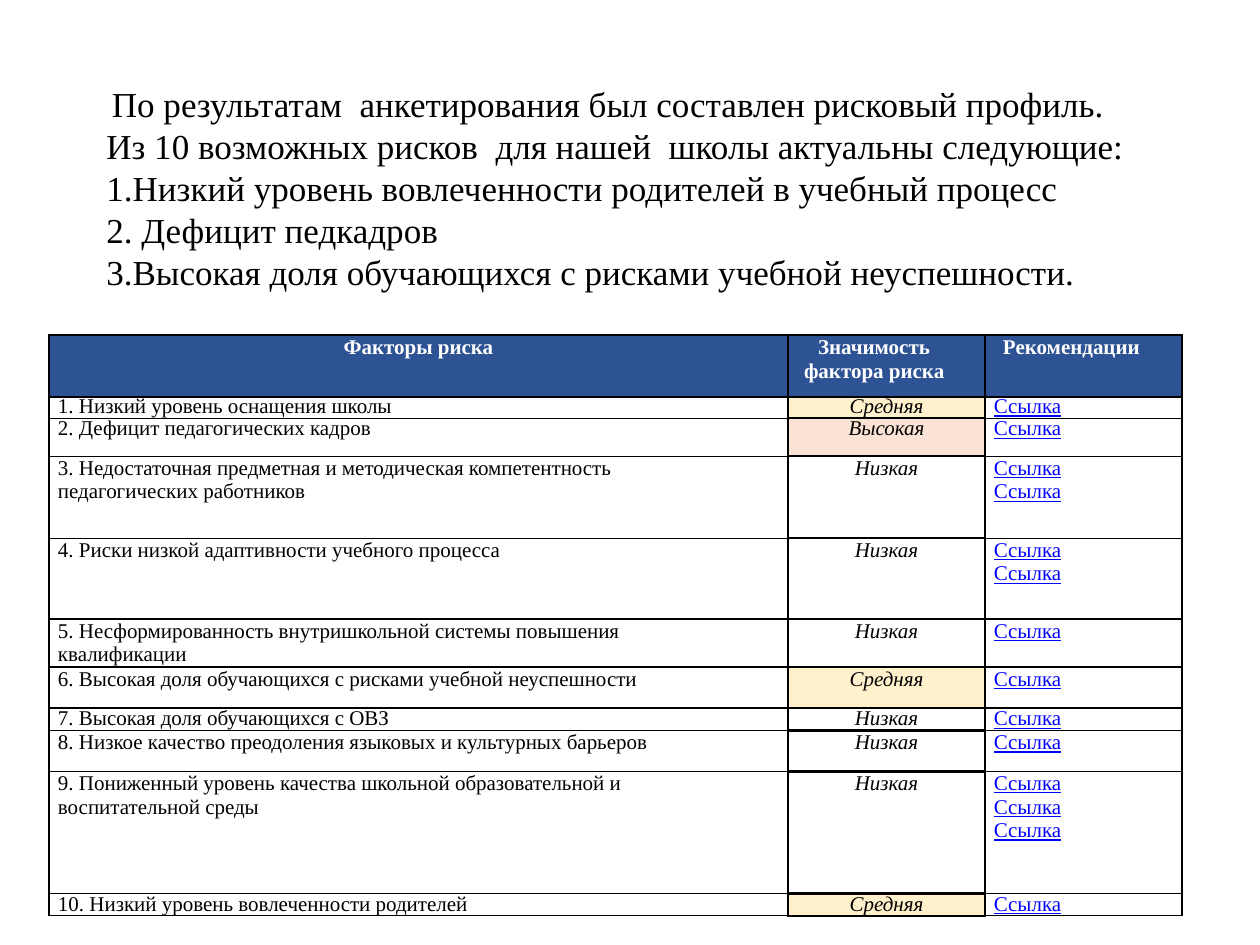
from dataclasses import dataclass

from lxml.etree import SubElement
from pptx import Presentation
from pptx.dml.color import RGBColor
from pptx.enum.text import MSO_ANCHOR, PP_ALIGN as Align
from pptx.oxml.ns import qn
from pptx.util import Emu, Pt

PX = 914400 // 126
LINK = "Ссылка"
LEVEL_FILLS = {"Средняя": "FFF1CC", "Высокая": "FAE3D4", "Низкая": None}

INTRO = [
    "По результатам  анкетирования был составлен рисковый профиль. "
    "Из 10 возможных рисков  для нашей  школы актуальны следующие:",
    "1.Низкий уровень вовлеченности родителей в учебный процесс",
    "2. Дефицит педкадров",
    "3.Высокая доля обучающихся с рисками учебной неуспешности.",
]
HEADERS = [
    ("Факторы риска", {"marL": 185, "marR": 185}, Align.CENTER),
    ("Значимость фактора риска", {"marL": 16, "indent": 14}, Align.LEFT),
    ("Рекомендации", {"marL": 18}, Align.LEFT),
]
RISKS = [
    ("1. Низкий уровень оснащения школы", "Средняя", 1, 21, 12.2),
    ("2. Дефицит педагогических кадров", "Высокая", 1, 38, 12.7),
    ("3. Недостаточная предметная и методическая компетентность педагогических работников",
     "Низкая", 2, 82, 13.5),
    ("4. Риски низкой адаптивности учебного процесса", "Низкая", 2, 81, 13.5),
    ("5. Несформированность внутришкольной системы повышения квалификации",
     "Низкая", 1, 48, 13.5),
    ("6. Высокая доля обучающихся с рисками учебной неуспешности", "Средняя", 1, 41, 13.5),
    ("7. Высокая доля обучающихся с ОВЗ", "Низкая", 1, 22, 12.7),
    ("8. Низкое качество преодоления языковых и культурных барьеров",
     "Низкая", 1, 41, 13.5),
    ("9. Пониженный уровень качества школьной образовательной и воспитательной среды",
     "Низкая", 3, 122, 13.5),
    ("10. Низкий уровень вовлеченности родителей", "Средняя", 1, 22, 12.7),
]


@dataclass(frozen=True)
class Theme:
    """Colours, fonts and type sizes of the slide."""
    ink: str = "000000"
    white: str = "FFFFFF"
    header: str = "2E5395"
    link: str = "0000FF"
    font: str = "Times New Roman"
    lead_font: str = "Calibri"
    intro_size: int = 20
    lead_size: int = 14
    table_size: int = 12
    intro_spacing: int = 24
    header_spacing: float = 13.7
    thin: float = 1
    thick: float = 1.5


class SlideBuilder:
    """Draws styled elements on the current slide."""

    def __init__(self, slide, theme):
        """Keep the slide and its theme."""
        self.slide = slide
        self.theme = theme

    def px(self, *lengths):
        """Turn pixels into EMU."""
        return [Emu(length * PX) for length in lengths]

    def run(self, paragraph, text, size, color, **formats):
        """Add one run of text."""
        run = paragraph.add_run()
        run.text = text
        values = {"name": self.theme.font, "size": Pt(size), **formats}
        for name, value in values.items():
            setattr(run.font, name, value)
        run.font.color.rgb = RGBColor.from_string(color)

    def intro(self, box, lines):
        """Add the introductory text box."""
        theme = self.theme
        frame = self.slide.shapes.add_textbox(*self.px(*box)).text_frame
        formats = {"word_wrap": True, "vertical_anchor": MSO_ANCHOR.TOP,
                   "margin_top": self.px(10)[0]}
        for name, value in formats.items():
            setattr(frame, name, value)
        for index, line in enumerate(lines):
            paragraph = frame.paragraphs[0] if index == 0 else frame.add_paragraph()
            paragraph.line_spacing = Pt(theme.intro_spacing)
            if index == 0:
                self.run(paragraph, " ", theme.lead_size, theme.ink, name=theme.lead_font)
            self.run(paragraph, line, theme.intro_size, theme.ink)

    def table(self, left, top, widths, heights):
        """Add an unstyled table of the given column widths and row heights."""
        box = self.px(left, top, sum(widths), sum(heights))
        table = self.slide.shapes.add_table(len(heights), len(widths), *box).table
        table.first_row = table.horz_banding = False
        for column, width in zip(table.columns, self.px(*widths)):
            column.width = width
        for row, height in zip(table.rows, self.px(*heights)):
            row.height = height
        return table

    def borders(self, cell, thick_sides):
        """Draw the four cell borders."""
        properties = cell._tc.get_or_add_tcPr()
        for side in "LRTB":
            width = self.theme.thick if side in thick_sides else self.theme.thin
            line = SubElement(properties, qn(f"a:ln{side}"), w=str(Pt(width)))
            fill = SubElement(line, qn("a:solidFill"))
            SubElement(fill, qn("a:srgbClr"), val=self.theme.ink)

    def cell(self, cell, texts, indents, spacing, color, fill=None,
             align=Align.LEFT, thick_sides="", **formats):
        """Fill one table cell with words parted by plain spaces."""
        for side in ("left", "right", "top", "bottom"):
            setattr(cell, f"margin_{side}", 0)
        self.borders(cell, thick_sides)
        if fill:
            cell.fill.solid()
            cell.fill.fore_color.rgb = RGBColor.from_string(fill)
        else:
            cell.fill.background()
        paragraph = cell.text_frame.paragraphs[0]
        paragraph.alignment = align
        paragraph.line_spacing = Pt(spacing)
        for name, length in indents.items():
            paragraph._p.get_or_add_pPr().set(name, str(length * PX))
        for index, text in enumerate(texts):
            if index:
                self.run(paragraph, " ", self.theme.table_size, color)
            self.run(paragraph, text, self.theme.table_size, color, **formats)

    def header_row(self, table, headers):
        """Fill the heading row."""
        for column, (text, indents, align) in enumerate(headers):
            self.cell(table.cell(0, column), [text], indents, self.theme.header_spacing,
                      self.theme.white, self.theme.header, align,
                      "B" if column == 1 else "", bold=True)

    def risk_row(self, table, row, risk):
        """Fill one row with factor, level and links."""
        factor, level, links, _, spacing = risk
        theme = self.theme
        body = {"marL": 9, "marR": 100}
        self.cell(table.cell(row, 0), [factor], body, spacing, theme.ink, thick_sides="R")
        self.cell(table.cell(row, 1), [level], {"marL": 47, "marR": 47}, spacing, theme.ink,
                  LEVEL_FILLS[level], Align.CENTER, "LRTB", italic=True)
        self.cell(table.cell(row, 2), [LINK] * links, body, spacing, theme.link,
                  thick_sides="L", underline=True)


def main():
    """Build and save the risk profile slide."""
    presentation = Presentation()
    presentation.slide_width = Emu(1260 * PX)
    presentation.slide_height = Emu(945 * PX)
    slide = presentation.slides.add_slide(presentation.slide_layouts[6])
    builder = SlideBuilder(slide, Theme())
    builder.intro((94, 72, 1062, 649), INTRO)
    heights = [62] + [risk[3] for risk in RISKS]
    table = builder.table(49, 335, [739, 197, 197], heights)
    builder.header_row(table, HEADERS)
    for row, risk in enumerate(RISKS, 1):
        builder.risk_row(table, row, risk)
    presentation.save("out.pptx")


if __name__ == "__main__":
    main()
